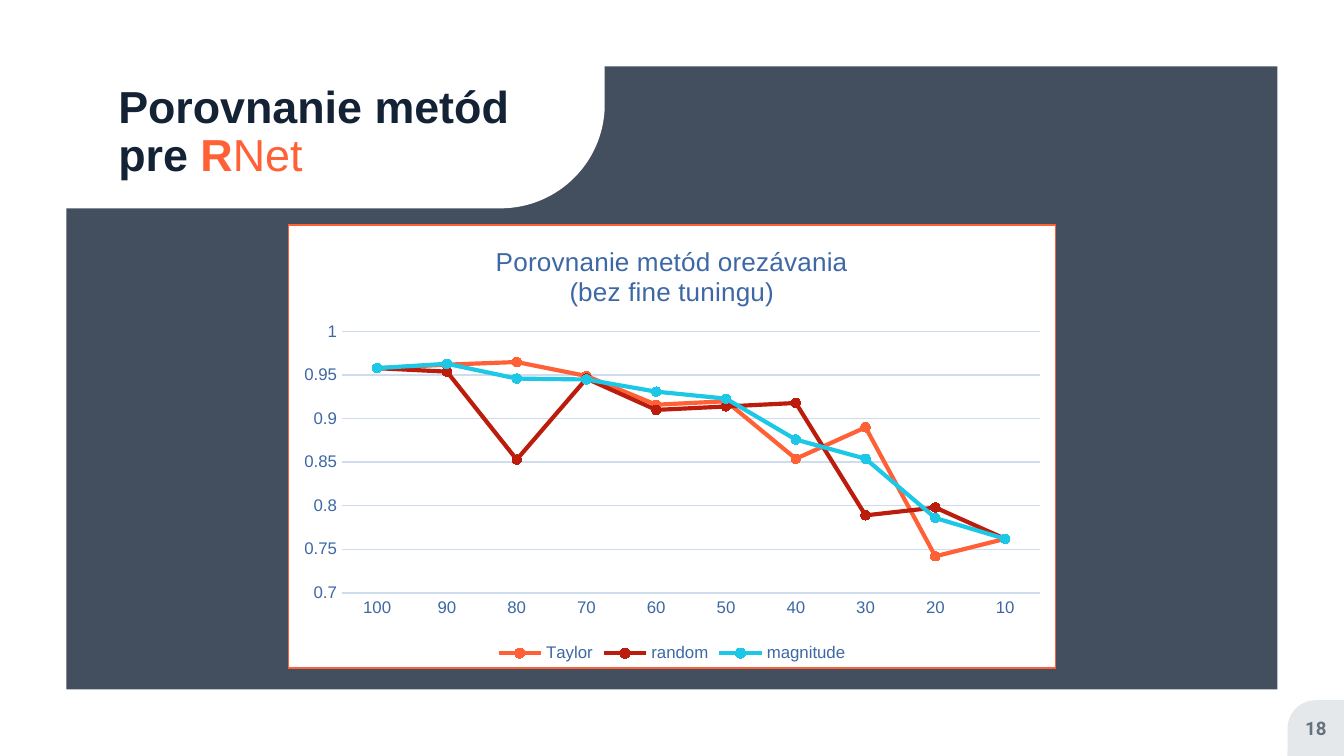
from lxml import etree
from pptx import Presentation
from pptx.chart.data import CategoryChartData
from pptx.dml.color import RGBColor
from pptx.enum.chart import XL_CHART_TYPE, XL_LEGEND_POSITION, XL_MARKER_STYLE, XL_TICK_MARK
from pptx.enum.shapes import MSO_SHAPE
from pptx.enum.text import MSO_ANCHOR, PP_ALIGN
from pptx.oxml import parse_xml
from pptx.oxml.ns import nsdecls, qn
from pptx.util import Inches, Pt

RECTANGLE = MSO_SHAPE.RECTANGLE
FRAME = MSO_SHAPE.FRAME
ROUND_ONE_CORNER = MSO_SHAPE.ROUND_1_RECTANGLE
MIDDLE = MSO_ANCHOR.MIDDLE
LEFT, CENTER = PP_ALIGN.LEFT, PP_ALIGN.CENTER
LINE_MARKERS = XL_CHART_TYPE.LINE_MARKERS
LEGEND_BOTTOM = XL_LEGEND_POSITION.BOTTOM
CIRCLE = XL_MARKER_STYLE.CIRCLE
NO_TICKS = XL_TICK_MARK.NONE

COLORS = {
    "navy": "142236", "white": "FFFFFF", "tab": "E5E8EB", "number": "667180",
    "orange": "FF6035", "red": "BB1C0B", "cyan": "1DC8E6",
    "chart_text": "3D68A5", "grid": "CFDCED",
}
WIDTH = 10
HEIGHT = WIDTH * 9 / 16
TAB_BOX = (9.58, 5.21, 0.42, 0.42)
CATEGORIES = ["100", "90", "80", "70", "60", "50", "40", "30", "20", "10"]
SERIES = [
    ("Taylor", "orange", [0.958, 0.962, 0.965, 0.949, 0.916, 0.92, 0.854, 0.89, 0.742, 0.762]),
    ("random", "red", [0.958, 0.954, 0.853, 0.946, 0.91, 0.914, 0.918, 0.789, 0.798, 0.762]),
    ("magnitude", "cyan", [0.958, 0.963, 0.946, 0.945, 0.931, 0.923, 0.876, 0.854, 0.786, 0.762]),
]


def rgb(name):
    return RGBColor.from_string(COLORS[name])


def inches(box):
    return [Inches(value) for value in box]


def style_font(font, size, color, name="Arial", bold=False):
    font.size, font.name, font.bold = Pt(size), name, bold
    font.color.rgb = rgb(color)


def style_line(line, color, width):
    line.color.rgb = rgb(color)
    line.width = Pt(width)


def clear_margins(frame):
    frame.margin_left = frame.margin_top = frame.margin_right = frame.margin_bottom = 0
    frame.vertical_anchor = MIDDLE
    frame.word_wrap = True


def add_panel(slide, kind, box, color, adjustment=None, flip=False):
    shape = slide.shapes.add_shape(kind, *inches(box))
    shape.shadow.inherit = False
    shape.fill.solid()
    shape.fill.fore_color.rgb = rgb(color)
    shape.line.fill.background()
    if adjustment is not None:
        shape.adjustments[0] = adjustment
    if flip:
        shape.element.spPr.find(qn("a:xfrm")).set("flipH", "1")
    return shape


def add_background(slide):
    page = (0, 0, WIDTH, HEIGHT)
    backdrop = add_panel(slide, RECTANGLE, page, "navy")
    color = backdrop.element.spPr.find(".//" + qn("a:srgbClr"))
    etree.SubElement(color, qn("a:alpha")).set("val", "80000")
    add_panel(slide, FRAME, page, "white", 0.088)
    corner = add_panel(slide, ROUND_ONE_CORNER, (0, 0, 4.5, 1.55), "white", 0.5, flip=True)
    corner.rotation = 180
    add_panel(slide, ROUND_ONE_CORNER, TAB_BOX, "tab", 0.5, flip=True)


def add_title(slide):
    title = slide.shapes.title
    title.left, title.top, title.width, title.height = inches((0.88, 0.41, 3.65, 1.55))
    slide.shapes.element.append(title.element)  # bring in front of the background
    frame = title.text_frame
    clear_margins(frame)
    frame.margin_bottom = Inches(0.39)
    paragraph = frame.paragraphs[0]
    paragraph.text = "Porovnanie metód\vpre "
    paragraph.alignment = LEFT
    paragraph.line_spacing = 0.9
    for run in paragraph.runs:
        style_font(run.font, 24, "navy", bold=True)
    for text, bold in (("R", True), ("Net", False)):
        run = paragraph.add_run()
        run.text = text
        style_font(run.font, 24, "orange", bold=bold)


def add_slide_number(slide):
    frame = slide.shapes.add_textbox(*inches(TAB_BOX)).text_frame
    clear_margins(frame)
    paragraph = frame.paragraphs[0]
    paragraph.text = "18"
    paragraph.alignment = CENTER
    style_font(paragraph.runs[0].font, 10, "number", "Roboto", True)


def style_axes(chart):
    categories, values = chart.category_axis, chart.value_axis
    for axis in (categories, values):
        axis.major_tick_mark = axis.minor_tick_mark = NO_TICKS
        style_font(axis.tick_labels.font, 9, "chart_text")
    style_line(categories.format.line, "grid", 0.75)
    values.format.line.fill.background()
    values.minimum_scale, values.maximum_scale, values.major_unit = 0.7, 1, 0.05
    style_line(values.major_gridlines.format.line, "grid", 0.75)


def style_chart_area(chart):
    """Give the chart its white fill and border, and fix the place of the plot."""
    chart_element = chart.element.find(qn("c:chart"))
    chart_element.addnext(parse_xml(
        f'<c:spPr {nsdecls("c", "a")}>'
        f'<a:solidFill><a:srgbClr val="{COLORS["white"]}"/></a:solidFill>'
        f'<a:ln w="{Pt(1)}"><a:solidFill><a:srgbClr val="{COLORS["orange"]}"/>'
        '</a:solidFill></a:ln></c:spPr>'))
    plot_area = chart_element.find(qn("c:plotArea"))
    for layout in plot_area.findall(qn("c:layout")):
        plot_area.remove(layout)
    plot_area.insert(0, parse_xml(
        f'<c:layout {nsdecls("c")}><c:manualLayout><c:layoutTarget val="inner"/>'
        '<c:xMode val="edge"/><c:yMode val="edge"/><c:x val="0.07"/><c:y val="0.24"/>'
        '<c:w val="0.91"/><c:h val="0.59"/></c:manualLayout></c:layout>'))


def add_line_chart(slide):
    data = CategoryChartData()
    data.categories = CATEGORIES
    for name, _, values in SERIES:
        data.add_series(name, values)
    box = inches((2.14, 1.67, 5.72, 3.31))
    chart = slide.shapes.add_chart(LINE_MARKERS, *box, data).chart
    style_font(chart.font, 10, "navy")
    style_chart_area(chart)

    title = chart.chart_title.text_frame.paragraphs[0]
    title.text = "Porovnanie metód orezávania\v(bez fine tuningu)"
    for run in title.runs:
        style_font(run.font, 14, "chart_text")
    chart.chart_title.include_in_layout = False

    chart.has_legend = True
    chart.legend.position = LEGEND_BOTTOM
    chart.legend.include_in_layout = False
    style_font(chart.legend.font, 9, "chart_text")

    style_axes(chart)
    chart.plots[0].vary_by_categories = False
    for series, (_, color, _) in zip(chart.plots[0].series, SERIES):
        series.smooth = False
        style_line(series.format.line, color, 2.25)
        marker = series.marker
        marker.style, marker.size = CIRCLE, 5
        marker.format.fill.solid()
        marker.format.fill.fore_color.rgb = rgb(color)
        style_line(marker.format.line, color, 0.75)


def main():
    presentation = Presentation()
    presentation.slide_width, presentation.slide_height = Inches(WIDTH), Inches(HEIGHT)
    slide = presentation.slides.add_slide(presentation.slide_layouts[5])
    add_background(slide)
    add_title(slide)
    add_slide_number(slide)
    add_line_chart(slide)
    presentation.save("out.pptx")


if __name__ == "__main__":
    main()
